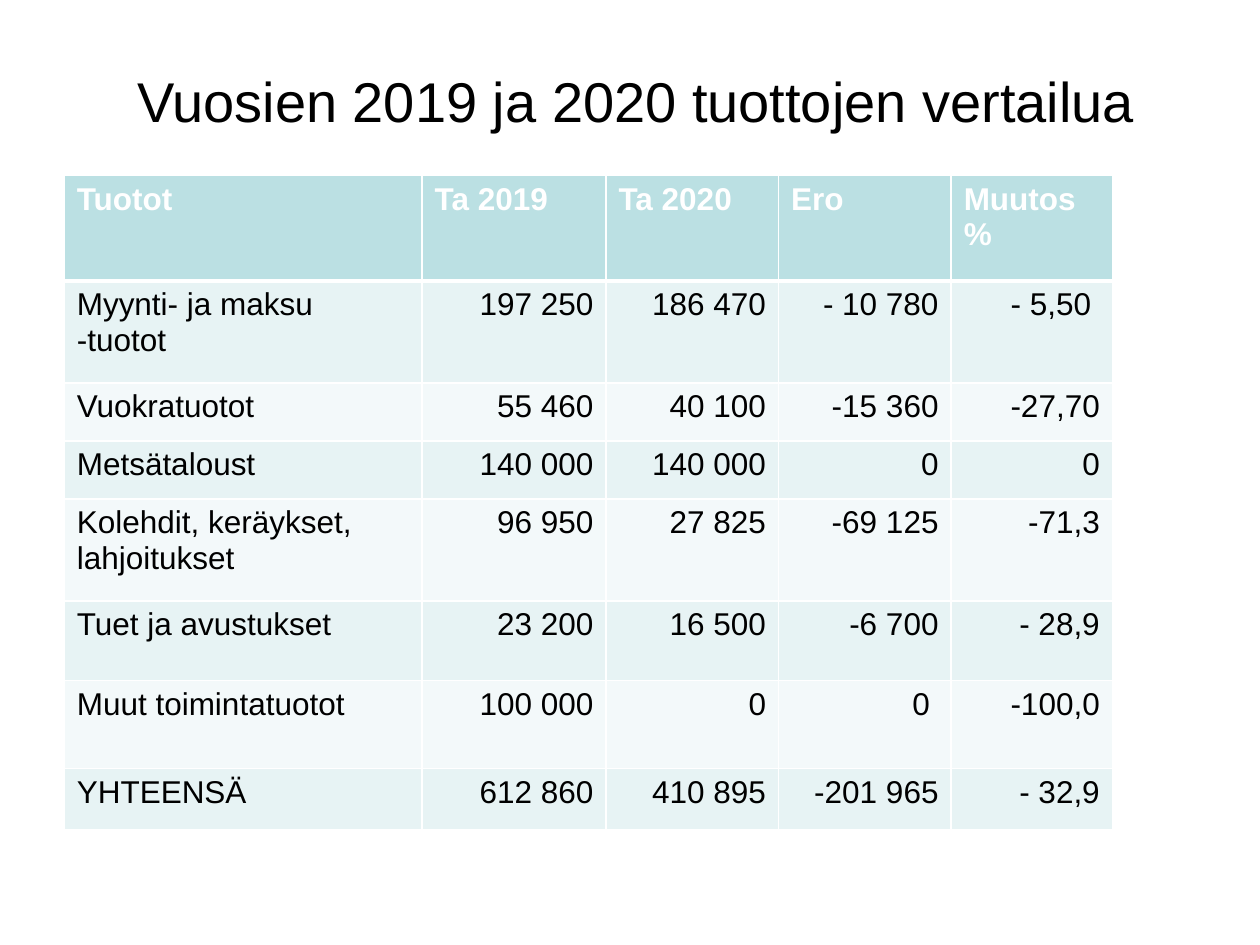
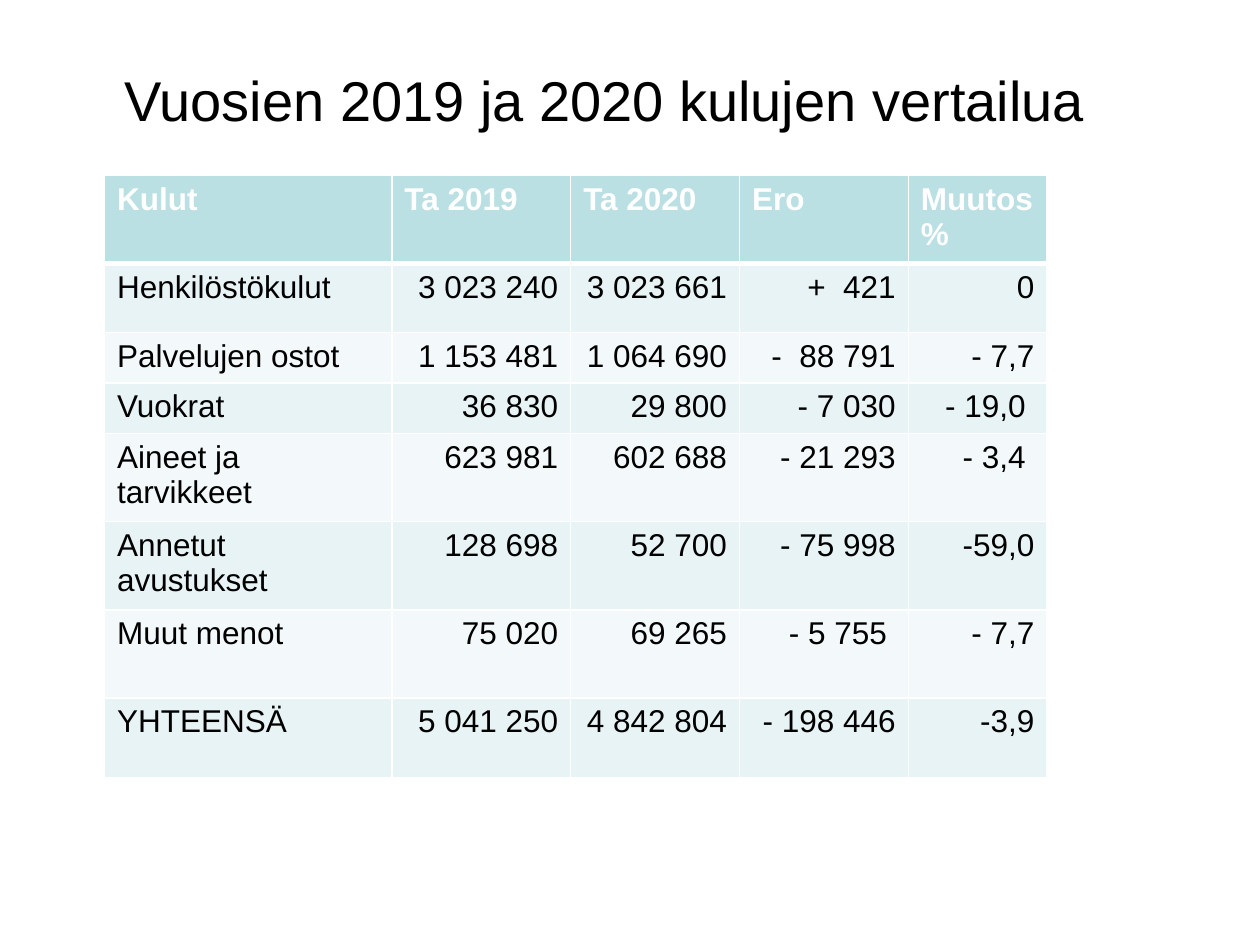
from dataclasses import dataclass

from lxml.etree import SubElement as Sub
from pptx import Presentation
from pptx.dml.color import RGBColor as Rgb
from pptx.enum.text import MSO_ANCHOR as Anchor, MSO_AUTO_SIZE as Fit, PP_ALIGN as Align
from pptx.oxml.ns import qn
from pptx.util import Inches, Pt

FONT = "Arial"
COLORS = {
    "ink": "000000",
    "white": "FFFFFF",
    "head": "BBE0E3",
    "odd": "E7F3F4",
    "even": "F3F9FA",
}
TOP = 1.39
THIN, THICK = 1, 3


@dataclass
class Page:
    title: str
    spot: tuple[float, float]
    left: float
    widths: list[float]
    heights: list[float]
    rows: list[list[str]]


PAGES = [
    Page(
        "Vuosien 2019 ja 2020 tuottojen vertailua",
        (0.55, 0.17),
        0.51,
        [2.84, 1.46, 1.37, 1.37, 1.28],
        [0.84, 0.81, 0.46, 0.46, 0.81, 0.63, 0.7, 0.49],
        [
            ["Tuotot", "Ta 2019", "Ta 2020", "Ero", "Muutos\n%"],
            ["Myynti- ja maksu -tuotot", "197 250", "186 470", "- 10 780", "- 5,50 "],
            ["Vuokratuotot", "55 460", "40 100", "-15 360", "-27,70"],
            ["Metsätaloust", "140 000", "140 000", "0", "0"],
            ["Kolehdit, keräykset, lahjoitukset", "96 950", "27 825", "-69 125", "-71,3"],
            ["Tuet ja avustukset", "23 200", "16 500", "-6 700", "- 28,9"],
            ["Muut toimintatuotot", "100 000", "0", "0 ", "-100,0"],
            ["YHTEENSÄ", "612 860", "410 895", "-201 965", "- 32,9"],
        ],
    ),
    Page(
        "Vuosien 2019 ja 2020 kulujen vertailua",
        (0.3, 0.16),
        0.83,
        [2.28, 1.42, 1.34, 1.34, 1.1],
        [0.7, 0.55, 0.4, 0.4, 0.7, 0.7, 0.7, 0.63],
        [
            ["Kulut", "Ta 2019", "Ta 2020", "Ero", "Muutos%"],
            ["Henkilöstökulut", "3 023 240", "3 023 661", "+  421", "0"],
            ["Palvelujen ostot", "1 153 481", "1 064 690", "-  88 791", "- 7,7"],
            ["Vuokrat", "36 830", "29 800", "- 7 030", "- 19,0 "],
            ["Aineet ja tarvikkeet", "623 981", "602 688", "- 21 293", "- 3,4 "],
            ["Annetut avustukset", "128 698", "52 700", "- 75 998", "-59,0"],
            ["Muut menot", "75 020", "69 265", "- 5 755 ", "- 7,7"],
            ["YHTEENSÄ", "5 041 250", "4 842 804", "- 198 446", "-3,9"],
        ],
    ),
]


def write(frame, text: str, *, size: float = 18, color: str = "ink",
          bold: bool = False, align=Align.LEFT) -> None:
    frame.text = text
    for para in frame.paragraphs:
        para.alignment = align
        for run in para.runs:
            font = run.font
            font.name, font.size, font.bold = FONT, Pt(size), bold
            font.color.rgb = Rgb.from_string(COLORS[color])


def edge(cell, top: float, bottom: float) -> None:
    """Draw white borders; call before the fill, which must follow them in the XML."""
    props = cell._tc.get_or_add_tcPr()
    for side, width in zip("LRTB", (THIN, THIN, top, bottom)):
        line = Sub(props, qn(f"a:ln{side}"), w=str(Pt(width)))
        Sub(Sub(line, qn("a:solidFill")), qn("a:srgbClr"), val=COLORS["white"])


def paint(cell, text: str, row: int, col: int) -> None:
    """Style one cell by its place in the grid."""
    head = row == 0
    edge(cell, THICK if row == 1 else THIN, THICK if head else THIN)
    tone = "head" if head else ("even", "odd")[row % 2]
    cell.fill.solid()
    cell.fill.fore_color.rgb = Rgb.from_string(COLORS[tone])
    write(cell.text_frame, text, color="white" if head else "ink", bold=head,
          align=Align.LEFT if head or col == 0 else Align.RIGHT)


def add_grid(slide, page: Page) -> None:
    grid = slide.shapes.add_table(
        len(page.heights), len(page.widths), Inches(page.left), Inches(TOP),
        Inches(sum(page.widths)), Inches(sum(page.heights))).table
    for col, width in zip(grid.columns, page.widths):
        col.width = Inches(width)
    for row, height in zip(grid.rows, page.heights):
        row.height = Inches(height)
    for r, texts in enumerate(page.rows):
        for c, text in enumerate(texts):
            paint(grid.cell(r, c), text, r, c)


def add_title(slide, page: Page) -> None:
    title = slide.shapes.title
    title.left, title.top = map(Inches, page.spot)
    title.width, title.height = Inches(9), Inches(1.25)
    frame = title.text_frame
    frame.auto_size, frame.vertical_anchor = Fit.NONE, Anchor.MIDDLE
    write(frame, page.title, size=32, align=Align.CENTER)


def main() -> None:
    deck = Presentation()
    deck.slide_width, deck.slide_height = Inches(10), Inches(7.5)
    layout = deck.slide_layouts.get_by_name("Title Only")
    for page in PAGES:
        slide = deck.slides.add_slide(layout)
        add_title(slide, page)
        add_grid(slide, page)
    deck.save("out.pptx")


if __name__ == "__main__":
    main()
